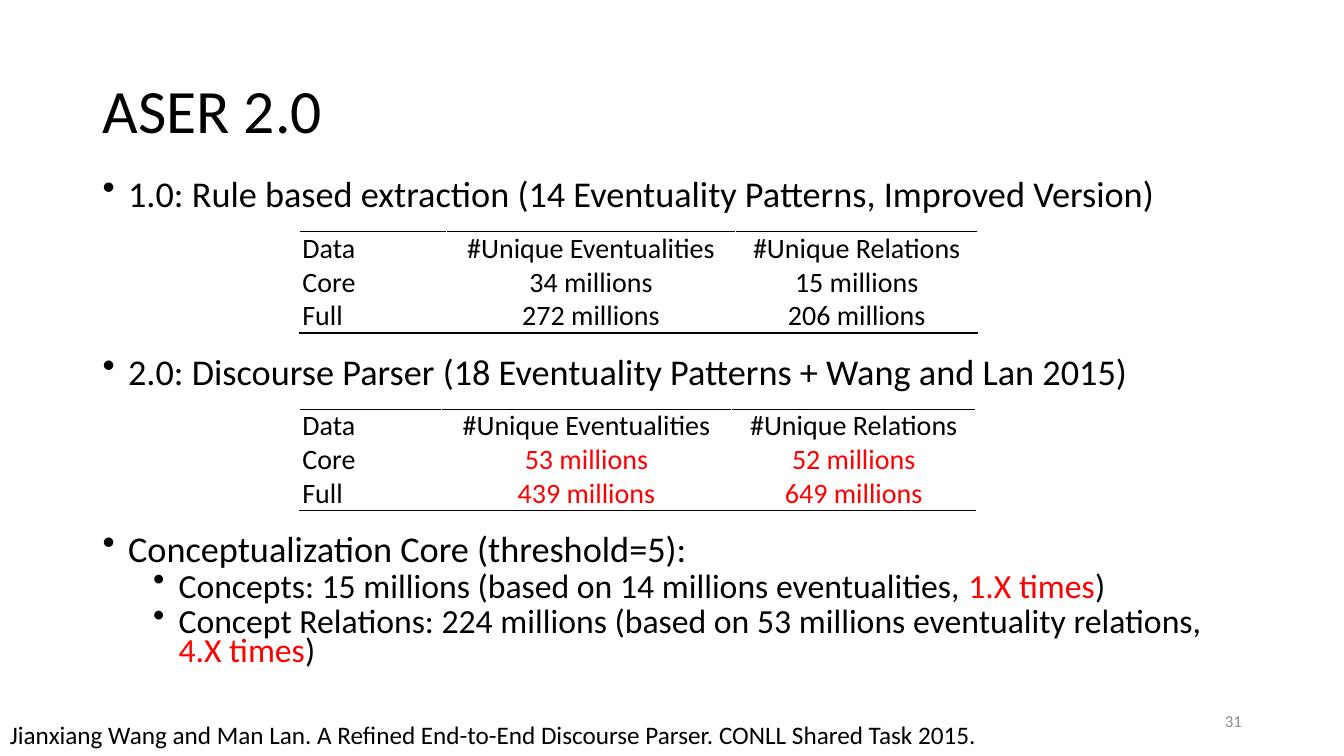
from lxml.etree import SubElement as sub_element
from pptx import Presentation
from pptx.dml.color import RGBColor
from pptx.enum.text import MSO_ANCHOR as ANCHOR, PP_ALIGN as ALIGN
from pptx.oxml import parse_xml
from pptx.oxml.ns import nsdecls, qn
from pptx.util import Cm, Pt

FONT, BLACK, RED, GREY = "Calibri", "000000", "FF0000", "8C8C8C"
BULLET_HANG = 0.64
LEVELS = [
    {"indent": 0.64, "size": 25.9, "before": 10},
    {"indent": 1.91, "size": 24.1, "before": 5},
]
TABLE_GAP = 105
HEADINGS = ["Data", "#Unique Eventualities", "#Unique Relations"]
BULLETS = [
    (0, 10, [("1.0: Rule based extraction (14 Eventuality Patterns, Improved Version)", BLACK)]),
    (0, TABLE_GAP, [("2.0: Discourse Parser (18 Eventuality Patterns + Wang and Lan 2015)", BLACK)]),
    (0, TABLE_GAP, [("Conceptualization Core (threshold=5):", BLACK)]),
    (1, 5, [("Concepts: 15 millions (based on 14 millions eventualities, ", BLACK),
            ("1.X times", RED), (")", BLACK)]),
    (1, 5, [("Concept Relations: 224 millions (based on 53 millions eventuality relations, ", BLACK),
            ("4.X times", RED), (")", BLACK)]),
]
TABLES = [
    {"box": (7.54, 5.84, 17.1, 2.55), "widths": [3.71, 7.29, 6.1], "color": BLACK,
     "rows": [["Core", "34 millions", "15 millions"], ["Full", "272 millions", "206 millions"]]},
    {"box": (7.54, 10.31, 17.05, 2.55), "widths": [3.58, 7.32, 6.15], "color": RED,
     "rows": [["Core", "53 millions", "52 millions"], ["Full", "439 millions", "649 millions"]]},
]


def rgb(value):
    """Turn a hex string into a colour."""
    return RGBColor.from_string(value)


def apply(target, formats):
    """Set each named attribute on the target."""
    for name, value in formats.items():
        setattr(target, name, value)


def add_span(para, text, size, color=BLACK):
    """Append one run of formatted text."""
    span = para.add_run()
    span.text = text
    apply(span.font, {"name": FONT, "size": Pt(size)})
    span.font.color.rgb = rgb(color)


def add_box(page, box, anchor=ANCHOR.TOP):
    """Add a wrapping text box and return its frame."""
    frame = page.shapes.add_textbox(*map(Cm, box)).text_frame
    apply(frame, {"word_wrap": True, "vertical_anchor": anchor})
    return frame


def add_line(page, box, text, size, color=BLACK, anchor=ANCHOR.TOP, **formats):
    """Place a one-paragraph text such as the title or the footer."""
    para = add_box(page, box, anchor).paragraphs[0]
    apply(para, formats)
    add_span(para, text, size, color)


def add_bullets(page, box, bullets):
    """Place the bulleted body, leaving room above bullets for the tables."""
    frame = add_box(page, box)
    for index, (level, before, spans) in enumerate(bullets):
        para = frame.add_paragraph() if index else frame.paragraphs[0]
        style = LEVELS[level]
        apply(para, {"level": level, "line_spacing": 0.7, "space_before": Pt(before)})
        properties = para._p.get_or_add_pPr()
        properties.set("marL", str(Cm(style["indent"])))
        properties.set("indent", str(-Cm(BULLET_HANG)))
        sub_element(properties, qn("a:buChar"), char="•")
        for text, color in spans:
            add_span(para, text, style["size"], color)


def add_rule(cell, side):
    """Draw a thin black border on one side of a cell."""
    border = parse_xml(
        f'<a:{side} {nsdecls("a")} w="{Pt(1)}"><a:solidFill>'
        f'<a:srgbClr val="{BLACK}"/></a:solidFill></a:{side}>')
    cell._tc.get_or_add_tcPr().insert(0, border)


def add_counts(page, box, widths, rows, color):
    """Place a table of counts ruled at its top and bottom."""
    lines = [HEADINGS] + rows
    table = page.shapes.add_table(len(lines), len(widths), *map(Cm, box)).table
    apply(table, {"first_row": False, "horz_banding": False})
    for column, width in zip(table.columns, widths):
        column.width = Cm(width)
    for row_index, line in enumerate(lines):
        table.rows[row_index].height = Cm(box[3] / len(lines))
        for column_index, text in enumerate(line):
            cell = table.cell(row_index, column_index)
            apply(cell, {"margin_left": Cm(0.08), "margin_right": Cm(0.08),
                         "margin_top": 0, "margin_bottom": 0})
            cell.fill.background()
            para = cell.text_frame.paragraphs[0]
            para.alignment = ALIGN.CENTER if column_index else ALIGN.LEFT
            add_span(para, text, 20, color if row_index and column_index else BLACK)
            if row_index == 0:
                add_rule(cell, "lnT")
            elif row_index == len(lines) - 1:
                add_rule(cell, "lnB")


def main():
    """Build the slide and save the deck."""
    deck = Presentation()
    apply(deck, {"slide_width": Cm(33.87), "slide_height": Cm(19.05)})
    page = deck.slides.add_slide(deck.slide_layouts[6])
    add_line(page, (2.34, 1.02, 29.21, 3.68), "ASER 2.0", 44,
             anchor=ANCHOR.MIDDLE, line_spacing=0.9)
    add_bullets(page, (2.34, 4.5, 29.21, 13.49), BULLETS)
    for counts in TABLES:
        add_counts(page, **counts)
    add_line(page, (0, 18.01, 32.77, 1.02),
             "Jianxiang Wang and Man Lan. A Refined End-to-End Discourse Parser. "
             "CONLL Shared Task 2015.", 18)
    add_line(page, (23.93, 17.65, 7.62, 1.02), "31", 12, GREY,
             ANCHOR.MIDDLE, alignment=ALIGN.RIGHT)
    deck.save("out.pptx")


if __name__ == "__main__":
    main()
